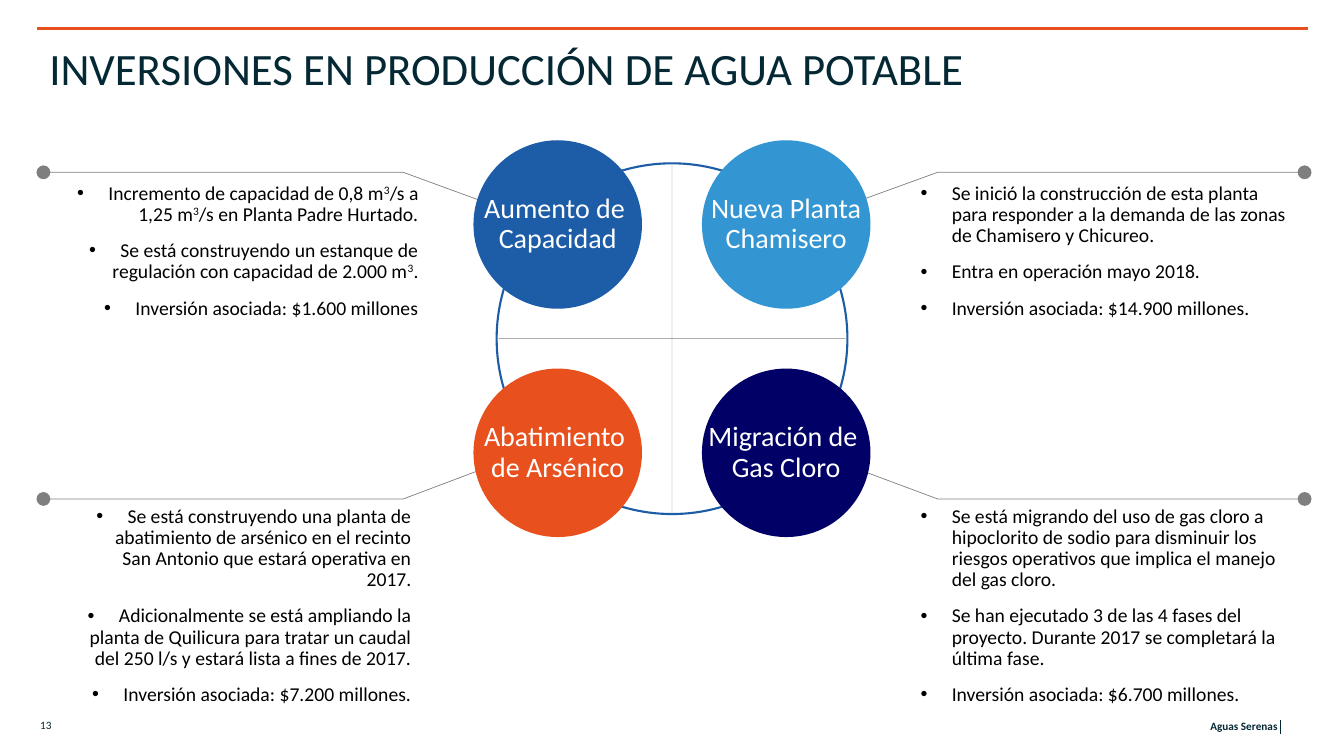
from lxml import etree
from pptx import Presentation
from pptx.dml.color import RGBColor
from pptx.enum.shapes import MSO_CONNECTOR, MSO_SHAPE
from pptx.enum.text import MSO_ANCHOR, PP_ALIGN
from pptx.oxml.ns import qn
from pptx.util import Inches, Pt

LEFT, CENTER, RIGHT = PP_ALIGN.LEFT, PP_ALIGN.CENTER, PP_ALIGN.RIGHT
MIDDLE, TOP = MSO_ANCHOR.MIDDLE, MSO_ANCHOR.TOP
STRAIGHT, OVAL = MSO_CONNECTOR.STRAIGHT, MSO_SHAPE.OVAL

BLACK = RGBColor(0x00, 0x00, 0x00)
WHITE = RGBColor(0xFF, 0xFF, 0xFF)
INK = RGBColor(0x04, 0x28, 0x34)
BLUE = RGBColor(0x1D, 0x5C, 0xA6)
SKY = RGBColor(0x33, 0x96, 0xD3)
ORANGE = RGBColor(0xE8, 0x51, 0x1E)
NAVY = RGBColor(0x00, 0x00, 0x66)

FONT = "Calibri"
WIDTH, HEIGHT = Inches(13.33), Inches(7.5)
BULLET_INDENT = Inches(0.31)
CENTER_X, CENTER_Y = 50, 44.8
CIRCLE_OFFSET_X, CIRCLE_OFFSET_Y = 8.5, 15.1
CIRCLE_SIZE, RING_SIZE = 12.54, 26.1
CROSS_REACH = 12.9

LEADER_X = {-1: (36.76, 30, 3.23), 1: (62.94, 69.77, 97.07)}
LEADER_Y = {-1: (27.2, 22.8), 1: (61.47, 66)}

TOPICS = [
    (-1, -1, "Aumento de \nCapacidad", BLUE, (3.08, 23.6, 29.03, 19.7), [
        "Incremento de capacidad de 0,8 m^3^/s a 1,25 m^3^/s en Planta Padre Hurtado.",
        "Se está construyendo un estanque de regulación con capacidad de 2.000 m^3^.",
        "Inversión asociada: $1.600 millones"]),
    (1, -1, "Nueva Planta\nChamisero", SKY, (67.52, 23.6, 29.63, 19.7), [
        "Se inició la construcción de esta planta para responder a la demanda de las zonas "
        "de Chamisero y Chicureo.",
        "Entra en operación mayo 2018.",
        "Inversión asociada: $14.900 millones."]),
    (-1, 1, "Abatimiento \nde Arsénico", ORANGE, (3.23, 66.3, 28.36, 28.1), [
        "Se está construyendo una planta de abatimiento de arsénico en el recinto San Antonio "
        "que estará operativa en 2017.",
        "Adicionalmente se está ampliando la planta de Quilicura para tratar un caudal del "
        "250 l/s y estará lista a fines de 2017.",
        "Inversión asociada: $7.200 millones."]),
    (1, 1, "Migración de \nGas Cloro", NAVY, (67.52, 66.3, 29.63, 28.1), [
        "Se está migrando del uso de gas cloro a hipoclorito de sodio para disminuir los "
        "riesgos operativos que implica el manejo del gas cloro.",
        "Se han ejecutado 3 de las 4 fases del proyecto. Durante 2017 se completará la "
        "última fase.",
        "Inversión asociada: $6.700 millones."]),
]


def across(share):
    return round(WIDTH * share / 100)


def down(share):
    return round(HEIGHT * share / 100)


def add_bullet(paragraph):
    properties = paragraph._p.get_or_add_pPr()
    properties.set("marL", str(BULLET_INDENT))
    properties.set("indent", str(-BULLET_INDENT))
    etree.SubElement(properties, qn("a:buFont")).set("typeface", "Arial")
    etree.SubElement(properties, qn("a:buChar")).set("char", "•")


def write_text(paragraph, text, size=14, color=BLACK, bold=False, align=LEFT,
               bullet=False, spacing=None, before=0):
    if bullet:
        add_bullet(paragraph)
    paragraph.alignment = align
    paragraph.line_spacing = spacing
    paragraph.space_before = Pt(before)
    for line_number, line in enumerate(text.split("\n")):
        if line_number:
            paragraph.add_line_break()
        for piece_number, piece in enumerate(line.split("^")):
            run = paragraph.add_run()
            run.text = piece
            run.font.name = FONT
            run.font.size = Pt(size)
            run.font.bold = bold
            run.font.color.rgb = color
            if piece_number % 2:
                run.font._element.set("baseline", "30000")


def add_text_box(slide, box, texts, anchor=MIDDLE, inset=0.1, before=0, **text_format):
    left, top, width, height = box
    shape = slide.shapes.add_textbox(across(left), down(top), across(width), down(height))
    frame = shape.text_frame
    frame.word_wrap = True
    frame.vertical_anchor = anchor
    frame.margin_left = frame.margin_right = Inches(inset)
    for number, text in enumerate(texts):
        paragraph = frame.add_paragraph() if number else frame.paragraphs[0]
        write_text(paragraph, text, before=before if number else 0, **text_format)


def set_line(shape, color, width, opacity=100):
    shape.line.color.rgb = color
    shape.line.width = Pt(width)
    if opacity < 100:
        fill_color = shape.line._ln.find(qn("a:solidFill"))[0]
        etree.SubElement(fill_color, qn("a:alpha")).set("val", str(opacity * 1000))


def add_line(slide, start, end, color, width, opacity=100):
    connector = slide.shapes.add_connector(STRAIGHT, *start, *end)
    set_line(connector, color, width, opacity)
    etree.SubElement(connector._element.spPr, qn("a:effectLst"))


def add_circle(slide, x, y, size):
    diameter = across(size)
    circle = slide.shapes.add_shape(
        OVAL, across(x) - diameter // 2, down(y) - diameter // 2, diameter, diameter)
    circle.shadow.inherit = False
    return circle


def add_ring(slide):
    ring = add_circle(slide, CENTER_X, CENTER_Y, RING_SIZE)
    ring.fill.background()
    set_line(ring, BLUE, 1.5)


def add_topic_circle(slide, side, level, label, color):
    circle = add_circle(slide, CENTER_X + side * CIRCLE_OFFSET_X,
                        CENTER_Y + level * CIRCLE_OFFSET_Y, CIRCLE_SIZE)
    circle.fill.solid()
    circle.fill.fore_color.rgb = color
    circle.line.fill.background()
    frame = circle.text_frame
    frame.word_wrap = False
    frame.vertical_anchor = MIDDLE
    write_text(frame.paragraphs[0], label, size=20, color=WHITE, align=CENTER, spacing=0.9)


def add_leader(slide, side, level):
    near, bend, far = (across(share) for share in LEADER_X[side])
    start, end = (down(share) for share in LEADER_Y[level])
    builder = slide.shapes.build_freeform(near, start)
    builder.add_line_segments([(bend, end), (far, end)], close=False)
    leader = builder.convert_to_shape()
    leader.shadow.inherit = False
    leader.fill.background()
    set_line(leader, BLACK, 0.5, opacity=50)
    tail = etree.SubElement(leader.line._ln, qn("a:tailEnd"))
    for name, value in (("type", "oval"), ("w", "lg"), ("len", "lg")):
        tail.set(name, value)


def add_cross(slide):
    x, y, reach = across(CENTER_X), down(CENTER_Y), across(CROSS_REACH)
    add_line(slide, (x, y - reach), (x, y + reach), BLACK, 0.25, opacity=50)
    add_line(slide, (x - reach, y), (x + reach, y), BLACK, 0.25, opacity=50)


def add_frame(slide):
    add_text_box(slide, (78.92, 94, 16.88, 4), ["Aguas Serenas"],
                 size=8, color=INK, bold=True, align=RIGHT)
    add_text_box(slide, (2.25, 93.87, 16.88, 4), ["13"], size=8, color=INK)
    add_line(slide, (across(95.27), down(95.2)), (across(95.27), down(97.07)), INK, 0.5)
    add_line(slide, (across(2.78), down(3.73)), (across(97.3), down(3.73)), ORANGE, 2)
    add_text_box(slide, (2.93, 4.13, 94.3, 9.6),
                 ["INVERSIONES EN PRODUCCIÓN DE AGUA POTABLE"], size=32, color=INK)


def main():
    presentation = Presentation()
    presentation.slide_width, presentation.slide_height = WIDTH, HEIGHT
    slide = presentation.slides.add_slide(presentation.slide_layouts[6])
    add_frame(slide)
    for side, level, label, color, box, points in TOPICS:
        add_text_box(slide, box, points, anchor=TOP, inset=0.13, before=10.7, bullet=True,
                     spacing=0.9, align=RIGHT if side < 0 else LEFT)
        add_leader(slide, side, level)
    add_ring(slide)
    for side, level, label, color, box, points in TOPICS:
        add_topic_circle(slide, side, level, label, color)
    add_cross(slide)
    presentation.save("out.pptx")


if __name__ == "__main__":
    main()
